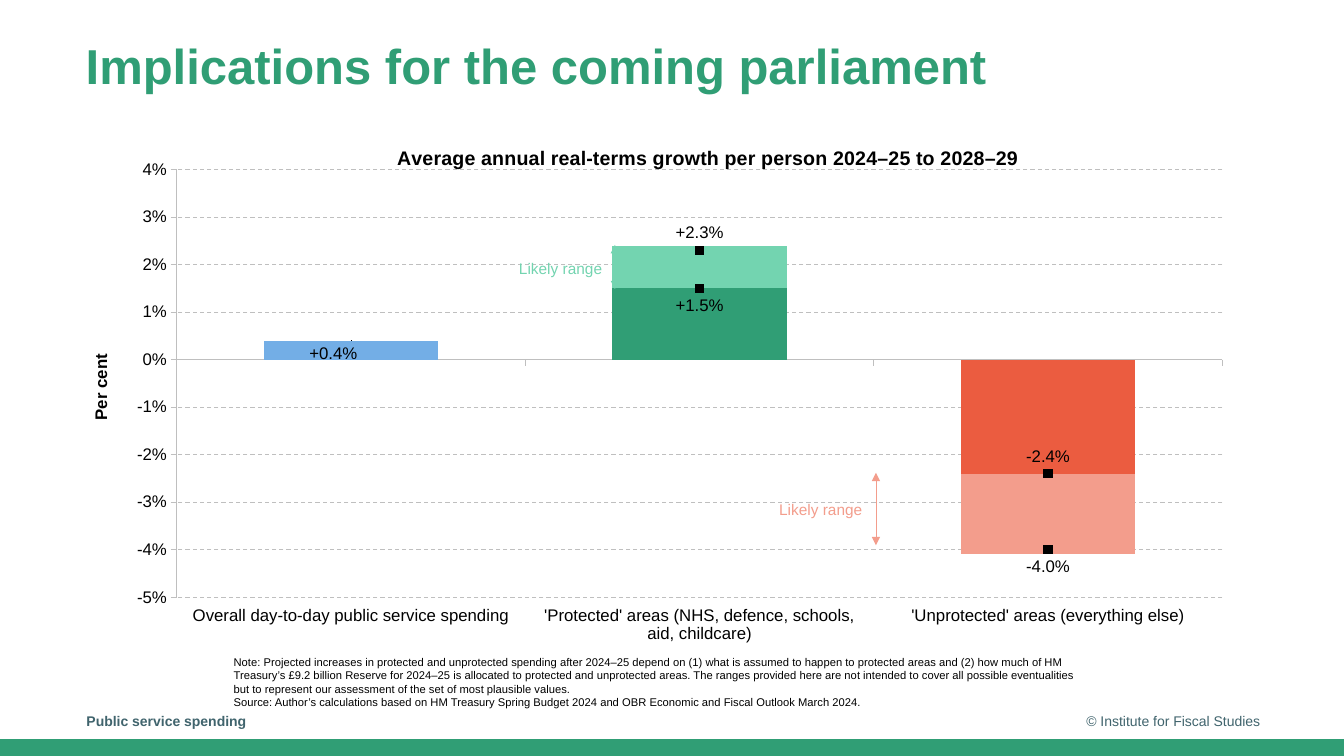
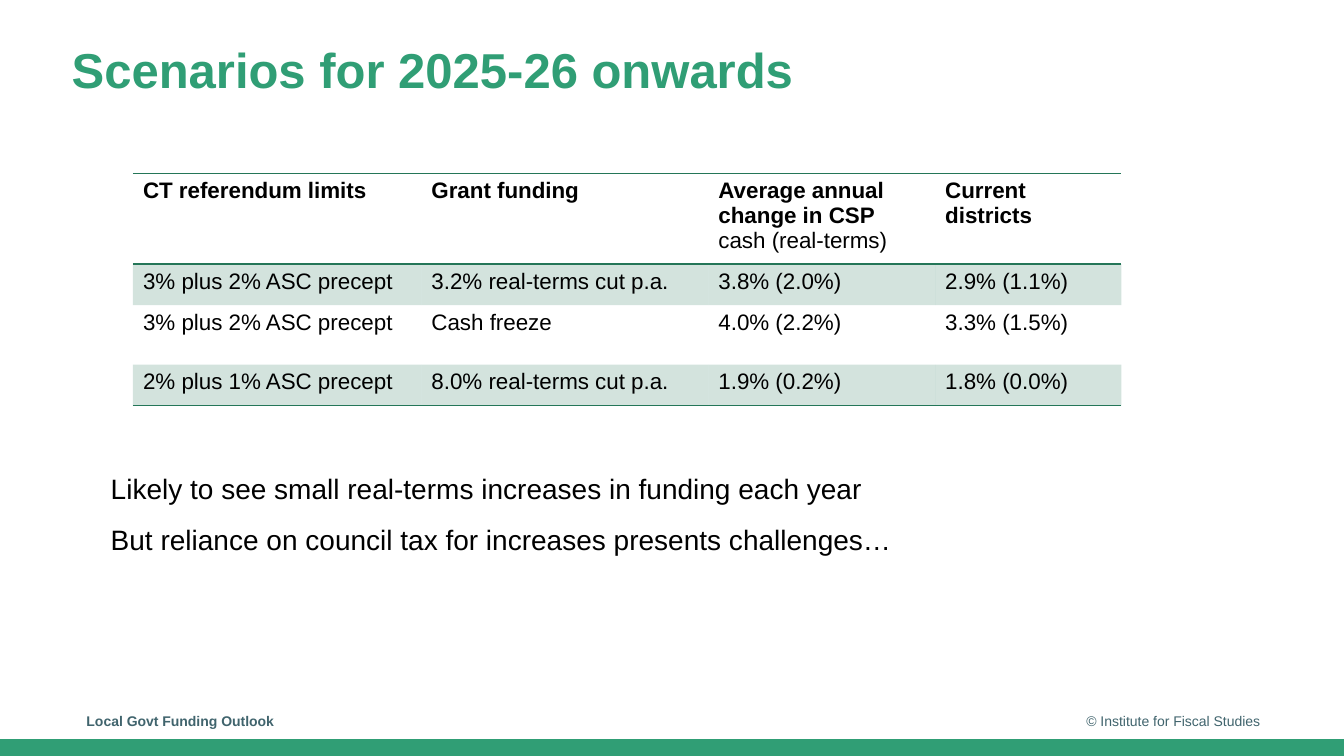
import lxml.etree
import pptx
import pptx.chart.data
import pptx.dml.color
import pptx.enum.chart
import pptx.enum.dml
import pptx.enum.shapes
import pptx.enum.text
import pptx.oxml.ns
import pptx.oxml.xmlchemy
import pptx.util

GREEN, MINT, RED, PINK, BLUE = "309E75", "73D4B0", "EB5C40", "F39D8C", "73AEE6"
DARK_GREEN, SLATE, GREY, BLACK = "247658", "40646D", "BFBFBF", "000000"
FONT = "Arial"
LEFT, RIGHT = pptx.enum.text.PP_ALIGN.LEFT, pptx.enum.text.PP_ALIGN.RIGHT
TOP, MIDDLE = pptx.enum.text.MSO_ANCHOR.TOP, pptx.enum.text.MSO_ANCHOR.MIDDLE
qn = pptx.oxml.ns.qn


def rgb(color):
    return pptx.dml.color.RGBColor.from_string(color)


def write(tf, text, size, color=BLACK, bold=False, align=LEFT, anchor=TOP):
    tf.text = text
    tf.word_wrap = True
    tf.vertical_anchor = anchor
    for p in tf.paragraphs:
        p.alignment = align
        for r in p.runs:
            r.font.name = FONT
            r.font.size = pptx.util.Pt(size)
            r.font.bold = bold
            r.font.color.rgb = rgb(color)


prs = pptx.Presentation()
prs.slide_width, prs.slide_height = pptx.util.Pt(960), pptx.util.Pt(540)
layout = prs.slide_layouts[5]

# Titles and footers
pages = [
    ("Implications for the coming parliament", (54, 26.6, 718, 45.4), "Public service spending"),
    ("Scenarios for 2025-26 onwards", (44, 29.5, 580, 45.4), "Local Govt Funding Outlook"),
]
for title, box, footer in pages:
    s = prs.slides.add_slide(layout)
    sp = s.shapes.title
    sp.left, sp.top, sp.width, sp.height = map(pptx.util.Pt, box)
    write(sp.text_frame, title, 35, GREEN, True, anchor=MIDDLE)
    sp.text_frame.auto_size = pptx.enum.text.MSO_AUTO_SIZE.NONE
    sp.text_frame.paragraphs[0].line_spacing = 0.9
    for text, left, width, bold, align in [
        (footer, 54.7, 636.5, True, LEFT),
        ("© Institute for Fiscal Studies", 691.2, 216, False, RIGHT),
    ]:
        sp = s.shapes.add_textbox(*map(pptx.util.Pt, (left, 500.4, width, 28.8)))
        write(sp.text_frame, text, 10, SLATE, bold, align, MIDDLE)
chart_slide, table_slide = prs.slides

# Bottom band, shared through the layout
band = chart_slide.shapes.add_shape(
    pptx.enum.shapes.MSO_SHAPE.RECTANGLE, *map(pptx.util.Pt, (0, 528, 960, 12)))
band.shadow.inherit = False
band.fill.solid()
band.fill.fore_color.rgb = rgb(GREEN)
band.line.fill.background()
layout.shapes.element.append(band.element)

# Growth chart: stacked columns
data = pptx.chart.data.CategoryChartData()
data.categories = [
    "Overall day-to-day public service spending",
    "'Protected' areas (NHS, defence, schools, aid, childcare)",
    "'Unprotected' areas (everything else)",
]
data.add_series("Series 1", (0.004, 0.015, -0.024))
data.add_series("Series 2", (None, 0.009, -0.017))
data.add_series("Series 3", (0.004, 0.015, -0.024))
data.add_series("Series 4", (0.004, 0.023, -0.04))
chart = chart_slide.shapes.add_chart(
    pptx.enum.chart.XL_CHART_TYPE.COLUMN_STACKED,
    *map(pptx.util.Pt, (54, 97.2, 841, 374.4)), data).chart
chart.has_legend = False
chart.font.name = FONT
chart.font.size = pptx.util.Pt(12)
chart.font.color.rgb = rgb(BLACK)
chart.has_title = True
write(chart.chart_title.text_frame,
      "Average annual real-terms growth per person 2024–25 to 2028–29", 14, bold=True)

# The last two series become markers on the same axes
bars = chart.plots[0]
bars.gap_width, bars.overlap, bars.vary_by_categories = 100, 100, False
bar_xml = bars._element
line_xml = pptx.oxml.xmlchemy.OxmlElement("c:lineChart")
bar_xml.addnext(line_xml)
for tag, val in [("c:grouping", "standard"), ("c:varyColors", "0")]:
    lxml.etree.SubElement(line_xml, qn(tag)).set("val", val)
for ser in bar_xml.findall(qn("c:ser"))[2:]:
    for flag in ser.findall(qn("c:invertIfNegative")):
        ser.remove(flag)
    line_xml.append(ser)
lxml.etree.SubElement(line_xml, qn("c:marker")).set("val", "1")
for axis_id in bar_xml.findall(qn("c:axId")):
    lxml.etree.SubElement(line_xml, qn("c:axId")).set("val", axis_id.get("val"))

# Column colours
for series, color, points in zip(bars.series, (GREEN, MINT), ({0: BLUE, 2: RED}, {2: PINK})):
    series.invert_if_negative = False
    series.format.fill.solid()
    series.format.fill.fore_color.rgb = rgb(color)
    for i, point_color in points.items():
        fill = series.points[i].format.fill
        fill.solid()
        fill.fore_color.rgb = rgb(point_color)

# Markers and their labels
ABOVE = pptx.enum.chart.XL_LABEL_POSITION.ABOVE
BELOW = pptx.enum.chart.XL_LABEL_POSITION.BELOW
MARK = pptx.enum.chart.XL_MARKER_STYLE
labels = [
    [(0, "+0.4%", BELOW), (1, "+1.5%", BELOW), (2, "-2.4%", ABOVE)],
    [(1, "+2.3%", ABOVE), (2, "-4.0%", BELOW)],
]
for series, point_labels in zip(chart.plots[1].series, labels):
    series.smooth = False
    series.format.line.fill.background()
    series.marker.style = MARK.SQUARE
    series.marker.size = 6
    series.marker.format.fill.solid()
    series.marker.format.fill.fore_color.rgb = rgb(BLACK)
    series.marker.format.line.color.rgb = rgb(BLACK)
    series.points[0].marker.style = MARK.NONE
    series.points[0].format.line.fill.background()
    series.data_labels.show_value = False
    for i, text, position in point_labels:
        label = series.points[i].data_label
        write(label.text_frame, text, 12)
        label.position = position

# Axes
cat, val = chart.category_axis, chart.value_axis
for axis in (cat, val):
    axis.major_tick_mark = pptx.enum.chart.XL_TICK_MARK.OUTSIDE
    axis.minor_tick_mark = pptx.enum.chart.XL_TICK_MARK.NONE
    axis.tick_label_position = pptx.enum.chart.XL_TICK_LABEL_POSITION.LOW
    axis.format.line.color.rgb = rgb(GREY)
    axis.format.line.width = pptx.util.Pt(0.75)
val.minimum_scale, val.maximum_scale, val.major_unit = -0.05, 0.04, 0.01
val.tick_labels.number_format = "0%"
val.tick_labels.number_format_is_linked = False
grid = val.major_gridlines.format.line
grid.color.rgb = rgb(GREY)
grid.width = pptx.util.Pt(0.75)
grid.dash_style = pptx.enum.dml.MSO_LINE.DASH
val.has_title = True
write(val.axis_title.text_frame, "Per cent", 12, bold=True)
body = val.axis_title._element.find(".//" + qn("a:bodyPr"))
body.set("rot", "-5400000")
body.set("vert", "horz")

# Manual places inside the chart
edge = [("xMode", "edge"), ("yMode", "edge")]
first_label = line_xml.find(".//" + qn("c:dLbl"))
for parent, index, settings in [
    (bar_xml.getparent(), 0, [("layoutTarget", "inner")] + edge
     + [("x", 0.086), ("y", 0.064), ("w", 0.888), ("h", 0.816)]),
    (chart.chart_title._element, 1, edge + [("x", 0.27), ("y", 0.01)]),
    (val.axis_title._element, 1, edge + [("x", 0.01), ("y", 0.41)]),
    (first_label, 1, [("x", -0.015), ("y", 0)]),
]:
    for old in parent.findall(qn("c:layout")):
        parent.remove(old)
    place = lxml.etree.Element(qn("c:layout"))
    manual = lxml.etree.SubElement(place, qn("c:manualLayout"))
    for tag, value in settings:
        lxml.etree.SubElement(manual, qn("c:" + tag)).set("val", str(value))
    parent.insert(index, place)

# Likely ranges: arrow and caption
for color, x, bottom, top, box in [
    (MINT, 439.2, 206.6, 175, (363.6, 181.4, 87, 21)),
    (PINK, 625.7, 389.5, 337.7, (549.4, 353.5, 82, 21)),
]:
    arrow = chart_slide.shapes.add_connector(
        pptx.enum.shapes.MSO_CONNECTOR.STRAIGHT, *map(pptx.util.Pt, (x, bottom, x, top)))
    arrow.line.color.rgb = rgb(color)
    arrow.line.width = pptx.util.Pt(0.5)
    for tag in ("a:headEnd", "a:tailEnd"):
        lxml.etree.SubElement(arrow.line._get_or_add_ln(), qn(tag)).set("type", "triangle")
    lxml.etree.SubElement(arrow._element.spPr, qn("a:effectLst"))
    sp = chart_slide.shapes.add_textbox(*map(pptx.util.Pt, box))
    write(sp.text_frame, "Likely range", 11, color)

# Note and source
sp = chart_slide.shapes.add_textbox(*map(pptx.util.Pt, (159.8, 464.4, 625, 46)))
write(sp.text_frame,
      "Note: Projected increases in protected and unprotected spending after 2024–25 depend on "
      "(1) what is assumed to happen to protected areas and (2) how much of HM Treasury’s "
      "£9.2 billion Reserve for 2024–25 is allocated to protected and unprotected areas. "
      "The ranges provided here are not intended to cover all possible eventualities but to "
      "represent our assessment of the set of most plausible values.\v"
      "Source: Author’s calculations based on HM Treasury Spring Budget 2024 and OBR Economic "
      "and Fiscal Outlook March 2024.", 8)

# Scenario table
rows = [
    ("CT referendum limits", "Grant funding",
     "Average annual change in CSP\ncash (real-terms)", "Current districts"),
    ("3% plus 2% ASC precept", "3.2% real-terms cut p.a.", "3.8% (2.0%)", "2.9% (1.1%)"),
    ("3% plus 2% ASC precept", "Cash freeze", "4.0% (2.2%)", "3.3% (1.5%)"),
    ("2% plus 1% ASC precept", "8.0% real-terms cut p.a.", "1.9% (0.2%)", "1.8% (0.0%)"),
]
widths, heights = (206, 205, 162, 133), (60.7, 29.3, 42.5, 29.3)
borders = {0: ("a:lnT", "a:lnB"), 3: ("a:lnB",)}
table = table_slide.shapes.add_table(
    len(rows), len(widths),
    *map(pptx.util.Pt, (95, 123.8, sum(widths), sum(heights)))).table
table.first_row = table.horz_banding = False
# Built-in style without fills or grid
table._tbl.tblPr.find(qn("a:tableStyleId")).text = "{2D5ABB26-0587-4C30-8999-92F81FD0307C}"
for col, width in zip(table.columns, widths):
    col.width = pptx.util.Pt(width)
for i, row in enumerate(rows):
    table.rows[i].height = pptx.util.Pt(heights[i])
    for j, text in enumerate(row):
        cell = table.cell(i, j)
        write(cell.text_frame, text, 16, bold=i == 0)
        for p in cell.text_frame.paragraphs[1:]:
            p.runs[0].font.bold = False
        tcPr = cell._tc.get_or_add_tcPr()
        for tag in borders.get(i, ()):
            ln = lxml.etree.SubElement(tcPr, qn(tag), w="12700")
            fill = lxml.etree.SubElement(ln, qn("a:solidFill"))
            lxml.etree.SubElement(fill, qn("a:srgbClr"), val=DARK_GREEN)
        if i % 2:
            cell.fill.solid()
            cell.fill.fore_color.rgb = rgb(DARK_GREEN)
            color = tcPr.find(qn("a:solidFill") + "/" + qn("a:srgbClr"))
            lxml.etree.SubElement(color, qn("a:alpha"), val="20000")
        else:
            cell.fill.background()

# Conclusions
sp = table_slide.shapes.add_textbox(*map(pptx.util.Pt, (72, 333.5, 816, 140)))
write(sp.text_frame,
      "Likely to see small real-terms increases in funding each year\n"
      "But reliance on council tax for increases presents challenges…", 20)
sp.text_frame.paragraphs[0].space_after = pptx.util.Pt(4.5)
sp.text_frame.paragraphs[1].space_before = pptx.util.Pt(8)

prs.save("out.pptx")
